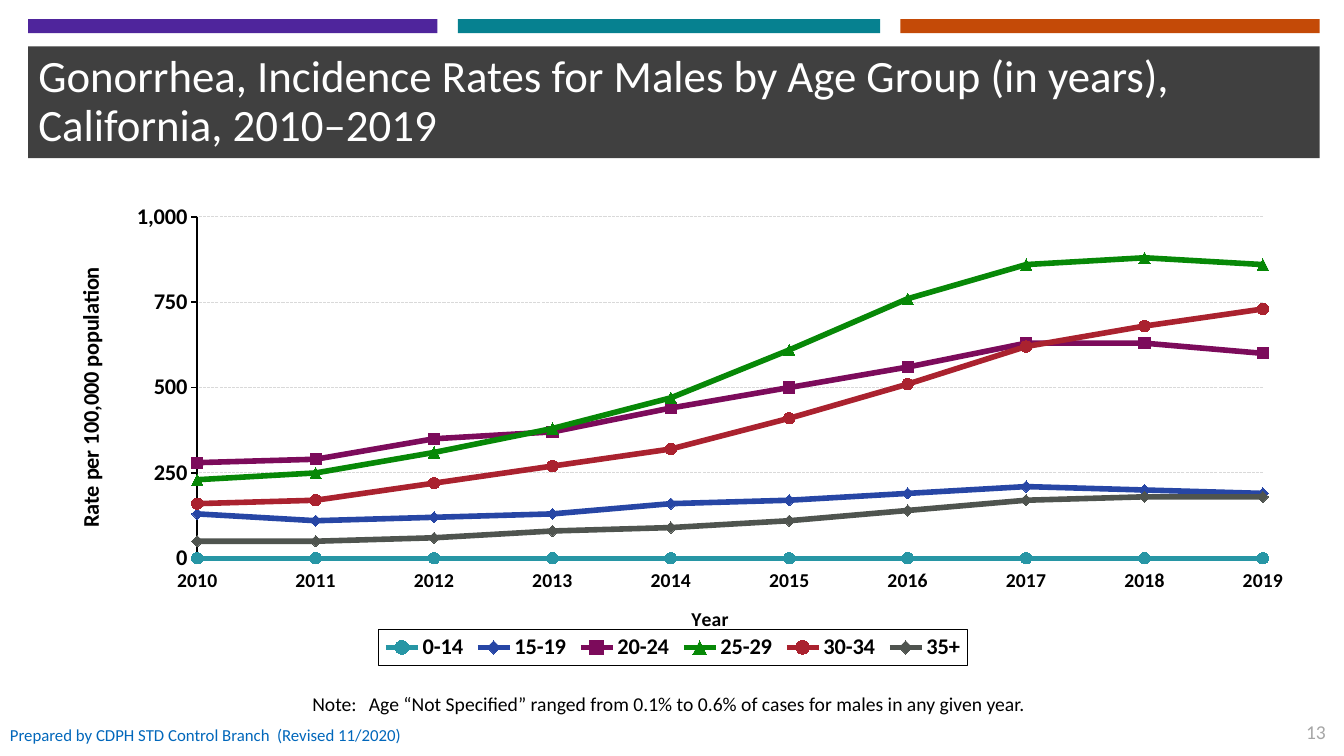
from lxml import etree
from pptx import Presentation
from pptx.chart.data import CategoryChartData
from pptx.dml.color import RGBColor
from pptx.enum.chart import XL_CHART_TYPE, XL_LEGEND_POSITION, XL_MARKER_STYLE, XL_TICK_MARK
from pptx.enum.dml import MSO_LINE
from pptx.enum.shapes import MSO_SHAPE
from pptx.enum.text import MSO_ANCHOR, MSO_AUTO_SIZE, PP_ALIGN
from pptx.oxml import parse_xml
from pptx.oxml.ns import nsdecls, qn
from pptx.util import Inches, Pt

CIRCLE, DIAMOND = XL_MARKER_STYLE.CIRCLE, XL_MARKER_STYLE.DIAMOND
SQUARE, TRIANGLE = XL_MARKER_STYLE.SQUARE, XL_MARKER_STYLE.TRIANGLE
LEFT, RIGHT = PP_ALIGN.LEFT, PP_ALIGN.RIGHT
TOP, MIDDLE = MSO_ANCHOR.TOP, MSO_ANCHOR.MIDDLE

BLACK = RGBColor(0x00, 0x00, 0x00)
WHITE = RGBColor(0xFF, 0xFF, 0xFF)
CHARCOAL = RGBColor(0x40, 0x40, 0x40)
PURPLE = RGBColor(0x4F, 0x25, 0x9C)
TEAL = RGBColor(0x06, 0x81, 0x90)
ORANGE = RGBColor(0xC4, 0x4A, 0x07)
FOOTER_BLUE = RGBColor(0x01, 0x67, 0xBB)
NUMBER_GRAY = RGBColor(0xA6, 0xA6, 0xA6)
GRID_GRAY = RGBColor(0xD9, 0xD9, 0xD9)

MARGIN, BAND_TOP, BAND_WIDTH, BAND_HEIGHT = 0.28, 0.46, 12.81, 1.11
FOOTER_TOP = 7.09


def set_font(font, size, color, bold=False):
    values = {"name": "Calibri", "size": Pt(size), "bold": bold}
    for name, value in values.items():
        setattr(font, name, value)
    font.color.rgb = color


presentation = Presentation()
presentation.slide_width, presentation.slide_height = Inches(13.33), Inches(7.5)
slide = presentation.slides.add_slide(presentation.slide_layouts[5])
shapes = slide.shapes

# Title band and the three accent bars above it
for left, top, width, height, color in [
    (MARGIN, BAND_TOP, BAND_WIDTH, BAND_HEIGHT, CHARCOAL),
    (MARGIN, 0.19, 4.06, 0.14, PURPLE),
    (4.54, 0.19, 4.19, 0.14, TEAL),
    (8.93, 0.19, 4.16, 0.14, ORANGE),
]:
    bar = shapes.add_shape(
        MSO_SHAPE.RECTANGLE, Inches(left), Inches(top), Inches(width), Inches(height))
    bar.shadow.inherit = False
    bar.fill.solid()
    bar.fill.fore_color.rgb = color
    bar.line.fill.background()

# Title, brought in front of its band
title = shapes.title
shapes._spTree.append(title._element)
title.left, title.top = Inches(MARGIN), Inches(BAND_TOP)
title.width, title.height = Inches(BAND_WIDTH), Inches(BAND_HEIGHT)
title.text_frame.text = ("Gonorrhea, Incidence Rates for Males by Age Group (in years), "
                         "California, 2010–2019")
title.text_frame.auto_size = MSO_AUTO_SIZE.NONE
title.text_frame.vertical_anchor = MIDDLE
paragraph = title.text_frame.paragraphs[0]
paragraph.alignment, paragraph.line_spacing = LEFT, 0.9
set_font(paragraph.runs[0].font, 32, WHITE)

# Line chart
age_groups = [
    ("0-14", "2796A5", CIRCLE, [0] * 10),
    ("15-19", "2746A5", DIAMOND, [130, 110, 120, 130, 160, 170, 190, 210, 200, 190]),
    ("20-24", "7C0B5B", SQUARE, [280, 290, 350, 370, 440, 500, 560, 630, 630, 600]),
    ("25-29", "078807", TRIANGLE, [230, 250, 310, 380, 470, 610, 760, 860, 880, 860]),
    ("30-34", "AA222F", CIRCLE, [160, 170, 220, 270, 320, 410, 510, 620, 680, 730]),
    ("35+", "4F544F", DIAMOND, [50, 50, 60, 80, 90, 110, 140, 170, 180, 180]),
]
chart_data = CategoryChartData()
chart_data.categories = [str(year) for year in range(2010, 2020)]
for name, _, _, rates in age_groups:
    chart_data.add_series(name, rates)
chart = shapes.add_chart(
    XL_CHART_TYPE.LINE_MARKERS, Inches(0.45), Inches(1.98), Inches(12.45), Inches(4.63),
    chart_data).chart
chart.has_title = False
set_font(chart.font, 16, BLACK, True)
chart.plots[0].vary_by_categories = False

for series, (_, color, marker_style, _) in zip(chart.plots[0].series, age_groups):
    series_color = RGBColor.from_string(color)
    series.smooth = False
    series.format.line.width = Pt(4)
    series.format.line.color.rgb = series_color
    series.marker.style, series.marker.size = marker_style, 8
    series.marker.format.fill.solid()
    series.marker.format.fill.fore_color.rgb = series_color
    series.marker.format.line.fill.background()

category_axis, value_axis = chart.category_axis, chart.value_axis
for axis, axis_title, size in [
    (category_axis, "Year", 14),
    (value_axis, "Rate per 100,000 population", 16),
]:
    axis.axis_title.text_frame.text = axis_title
    set_font(axis.axis_title.text_frame.paragraphs[0].runs[0].font, size, BLACK, True)
    set_font(axis.tick_labels.font, size, BLACK, True)
    axis.major_tick_mark = XL_TICK_MARK.OUTSIDE
    axis.format.line.color.rgb = BLACK
    axis.format.line.width = Pt(1.1)

value_format = {"minimum_scale": 0, "maximum_scale": 1000, "major_unit": 250,
                "has_major_gridlines": True}
for name, value in value_format.items():
    setattr(value_axis, name, value)
value_axis.tick_labels.number_format = "#,##0"
value_axis.tick_labels.number_format_is_linked = False
gridline = value_axis.major_gridlines.format.line
gridline.color.rgb, gridline.width = GRID_GRAY, Pt(0.75)
gridline.dash_style = MSO_LINE.SQUARE_DOT
value_axis.axis_title._element.xpath(".//a:bodyPr")[0].set("rot", "-5400000")
value_axis._element.find(qn("c:majorUnit")).addprevious(
    parse_xml(f"<c:crossBetween {nsdecls('c')} val='midCat'/>"))

# Inner plot area, as shares of the chart
plot_area = chart._chartSpace.chart.plotArea
for old_layout in plot_area.findall(qn("c:layout")):
    plot_area.remove(old_layout)
layout = parse_xml(f"<c:layout {nsdecls('c')}><c:manualLayout/></c:layout>")
for tag, value in [("layoutTarget", "inner"), ("xMode", "edge"), ("yMode", "edge"),
                   ("x", "0.121"), ("y", "0.037"), ("w", "0.849"), ("h", "0.733")]:
    etree.SubElement(layout[0], qn(f"c:{tag}")).set("val", value)
plot_area.insert(0, layout)

# Boxed legend
chart.has_legend = True
legend = chart.legend
legend.position, legend.include_in_layout = XL_LEGEND_POSITION.BOTTOM, False
set_font(legend.font, 16, BLACK, True)
legend._element.find(qn("c:txPr")).addprevious(parse_xml(
    f"<c:spPr {nsdecls('c', 'a')}><a:ln w='12700'><a:solidFill>"
    "<a:srgbClr val='000000'/></a:solidFill></a:ln></c:spPr>"))

# Note, footer and slide number
note = "\tNote:\tAge “Not Specified” ranged from 0.1% to 0.6% of cases for males in any given year."
for text, left, top, width, height, size, color, alignment, anchor, wrap in [
    (note, 2.75, 6.82, 7.92, 0.34, 14, BLACK, LEFT, TOP, True),
    ("Prepared by CDPH STD Control Branch", 0, FOOTER_TOP, 2.8, 0.4,
     12, FOOTER_BLUE, LEFT, MIDDLE, True),
    ("(Revised 11/2020)", 2.65, FOOTER_TOP, 1.5, 0.4, 12, FOOTER_BLUE, LEFT, MIDDLE, True),
    ("13", 12.82, FOOTER_TOP, 0.43, 0.34, 14, NUMBER_GRAY, RIGHT, TOP, False),
]:
    frame = shapes.add_textbox(
        Inches(left), Inches(top), Inches(width), Inches(height)).text_frame
    frame.word_wrap, frame.vertical_anchor = wrap, anchor
    paragraph = frame.paragraphs[0]
    paragraph.alignment = alignment
    run = paragraph.add_run()
    run.text = text
    set_font(run.font, size, color)
    if text == note:
        tab_stops = etree.SubElement(paragraph._p.get_or_add_pPr(), qn("a:tabLst"))
        for position, side in [(0.69, "r"), (0.81, "l")]:
            tab_stop = etree.SubElement(tab_stops, qn("a:tab"))
            tab_stop.set("pos", str(Inches(position)))
            tab_stop.set("algn", side)

presentation.save("out.pptx")
